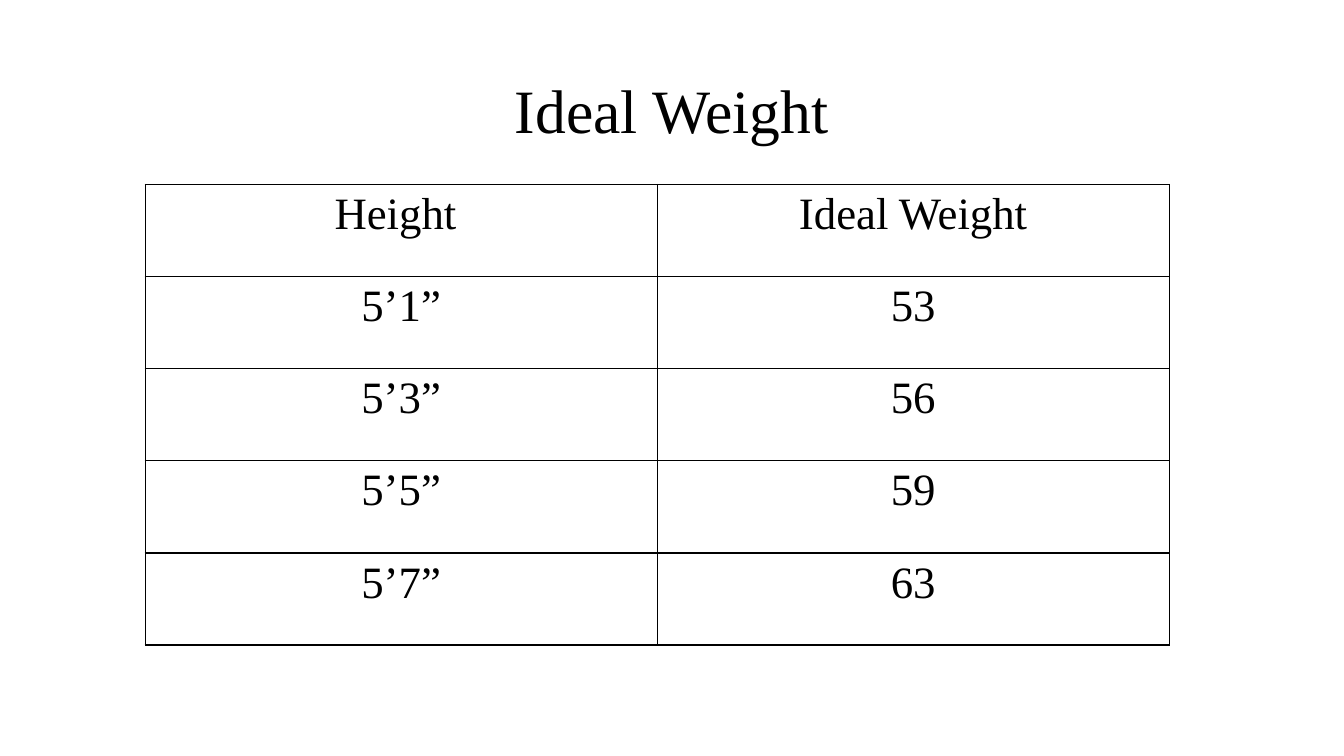
from lxml import etree
from pptx import Presentation
from pptx.dml.color import RGBColor
from pptx.enum import text as t
from pptx.oxml import ns
from pptx.util import Pt

FONT = "Times New Roman"
COLORS = {"ink": "000000", "paper": "FFFFFF"}
TITLE = "Ideal Weight"
ROWS = [
    ("Height ", "Ideal Weight"),
    ("5’1”", "53"),
    ("5’3”", "56"),
    ("5’5”", "59"),
    ("5’7”", "63"),
]


def write(frame, words, size):
    frame.text = words
    para = frame.paragraphs[0]
    para.alignment = t.PP_ALIGN.CENTER
    for run in para.runs:
        run.font.size = Pt(size)
        run.font.name = FONT
        run.font.bold = False
        run.font.color.rgb = RGBColor.from_string(COLORS["ink"])
    return para


def add_title(slide):
    box = slide.shapes.add_textbox(Pt(66), Pt(28.8), Pt(828), Pt(104.4))
    frame = box.text_frame
    frame.word_wrap = True
    frame.vertical_anchor = t.MSO_ANCHOR.MIDDLE
    write(frame, TITLE, 44).line_spacing = 0.9


def add_border(cell, width):
    props = cell._tc.get_or_add_tcPr()
    for side in ("lnL", "lnR", "lnT", "lnB"):
        line = etree.SubElement(props, ns.qn(f"a:{side}"), w=str(Pt(width)))
        fill = etree.SubElement(line, ns.qn("a:solidFill"))
        etree.SubElement(fill, ns.qn("a:srgbClr"), val=COLORS["ink"])


def add_grid(slide):
    shape = slide.shapes.add_table(
        len(ROWS), len(ROWS[0]), Pt(103.7), Pt(131.8), Pt(731.5), Pt(329)
    )
    table = shape.table
    table.first_row = False
    table.horz_banding = False
    for r, row in enumerate(ROWS):
        for c, words in enumerate(row):
            cell = table.cell(r, c)
            cell.margin_left = cell.margin_right = Pt(9.6)
            cell.margin_top = cell.margin_bottom = Pt(3.6)
            add_border(cell, 1)
            cell.fill.solid()
            cell.fill.fore_color.rgb = RGBColor.from_string(COLORS["paper"])
            write(cell.text_frame, words, 32)


def main():
    deck = Presentation()
    deck.slide_width = Pt(960)
    deck.slide_height = Pt(540)
    slide = deck.slides.add_slide(deck.slide_layouts[6])
    add_title(slide)
    add_grid(slide)
    deck.save("out.pptx")


if __name__ == "__main__":
    main()
